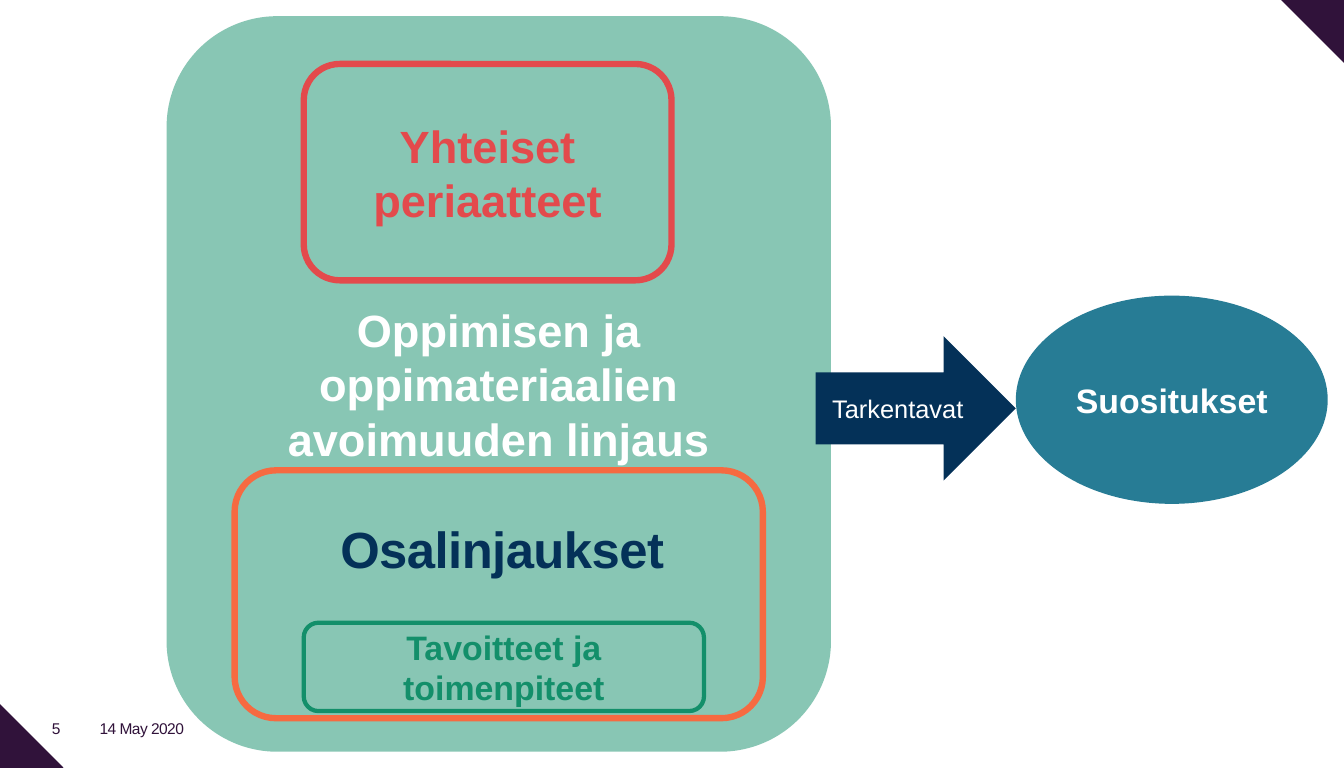
from dataclasses import dataclass
from typing import Optional

from lxml import etree
from pptx import Presentation
from pptx import util as u
from pptx.dml.color import RGBColor
from pptx.enum import shapes, text
from pptx.oxml import ns

KIND = shapes.MSO_SHAPE
PLUM, GREEN, RED, ORANGE = "30123A", "138F6A", "E34A4C", "F66A41"
TEAL, NAVY, WHITE = "277C95", "043158", "FFFFFF"


@dataclass
class Block:
    kind: KIND
    box: tuple[float, float, float, float]
    fill: Optional[str] = None
    alpha: int = 100
    line: Optional[str] = None
    width: float = 4.5
    words: str = ""
    size: int = 24
    ink: str = WHITE
    bold: bool = True
    turn: int = 0


@dataclass
class Label:
    box: tuple[float, float, float, float]
    words: str
    size: int = 11
    ink: str = PLUM
    bold: bool = False
    anchor: text.MSO_ANCHOR = text.MSO_ANCHOR.MIDDLE


BLOCKS = [
    Block(KIND.RECTANGLE, (-0.45, 7.11, 0.89, 0.89), PLUM, turn=45),
    Block(KIND.RECTANGLE, (12.79, -0.45, 0.89, 0.89), PLUM, turn=45),
    Block(KIND.ROUNDED_RECTANGLE, (1.64, 0.16, 6.54, 7.24), GREEN, 50,
          words="Oppimisen ja oppimateriaalien avoimuuden linjaus", size=32),
    Block(KIND.ROUNDED_RECTANGLE, (2.99, 0.63, 3.62, 2.13), line=RED,
          words="Yhteiset periaatteet", size=32, ink=RED),
    Block(KIND.ROUNDED_RECTANGLE, (2.31, 4.63, 5.2, 2.44), line=ORANGE),
    Block(KIND.ROUNDED_RECTANGLE, (2.99, 6.13, 3.94, 0.87), line=GREEN, width=3,
          words="Tavoitteet ja toimenpiteet", ink=GREEN),
    Block(KIND.OVAL, (10, 2.91, 3.07, 2.05), TEAL, words="Suositukset"),
    Block(KIND.RIGHT_ARROW, (8.03, 3.31, 1.97, 1.42), NAVY,
          words="Tarkentavat", size=18, bold=False),
]
LABELS = [
    Label((0.94, 7.09, 1.42, 0.16), "14 May 2020"),
    Label((0.47, 7.09, 0.47, 0.16), "5"),
    Label((3.31, 5.06, 3.31, 0.69), "Osalinjaukset", 36, NAVY, True,
          text.MSO_ANCHOR.TOP),
]


def paint(target, color: str) -> None:
    target.rgb = RGBColor.from_string(color)


def write(frame, item: Block | Label, align: text.PP_ALIGN):
    """Fill the frame with the item's words and return their run."""
    frame.word_wrap = True
    para = frame.paragraphs[0]
    para.alignment = align
    run = para.add_run()
    run.text = item.words
    font = para.font
    font.name, font.size, font.bold = "Arial", u.Pt(item.size), item.bold
    paint(font.color, item.ink)
    return run


def draw(slide, block: Block) -> None:
    shape = slide.shapes.add_shape(block.kind, *map(u.Inches, block.box))
    shape.shadow.inherit = False
    shape.rotation = block.turn
    if block.fill:
        shape.fill.solid()
        paint(shape.fill.fore_color, block.fill)
        if block.alpha < 100:
            tint = shape.fill._xPr.find(".//" + ns.qn("a:srgbClr"))
            etree.SubElement(tint, ns.qn("a:alpha"), val=str(block.alpha * 1000))
    else:
        shape.fill.background()
    if block.line:
        paint(shape.line.color, block.line)
        shape.line.width = u.Pt(block.width)
    else:
        shape.line.fill.background()
    if block.words:
        shape.text_frame.vertical_anchor = text.MSO_ANCHOR.MIDDLE
        write(shape.text_frame, block, text.PP_ALIGN.CENTER)


def note(slide, label: Label) -> None:
    """Add a plain text box with slightly tightened letters."""
    frame = slide.shapes.add_textbox(*map(u.Inches, label.box)).text_frame
    frame.margin_left = frame.margin_right = u.Inches(0.04)
    frame.margin_top = frame.margin_bottom = u.Inches(0.04)
    frame.vertical_anchor = label.anchor
    run = write(frame, label, text.PP_ALIGN.LEFT)
    run._r.get_or_add_rPr().set("spc", "-40")


def main() -> None:
    deck = Presentation()
    deck.slide_width, deck.slide_height = u.Inches(13.23), u.Inches(7.56)
    slide = deck.slides.add_slide(deck.slide_layouts[6])
    for block in BLOCKS:
        draw(slide, block)
    for label in LABELS:
        note(slide, label)
    deck.save("out.pptx")


if __name__ == "__main__":
    main()
